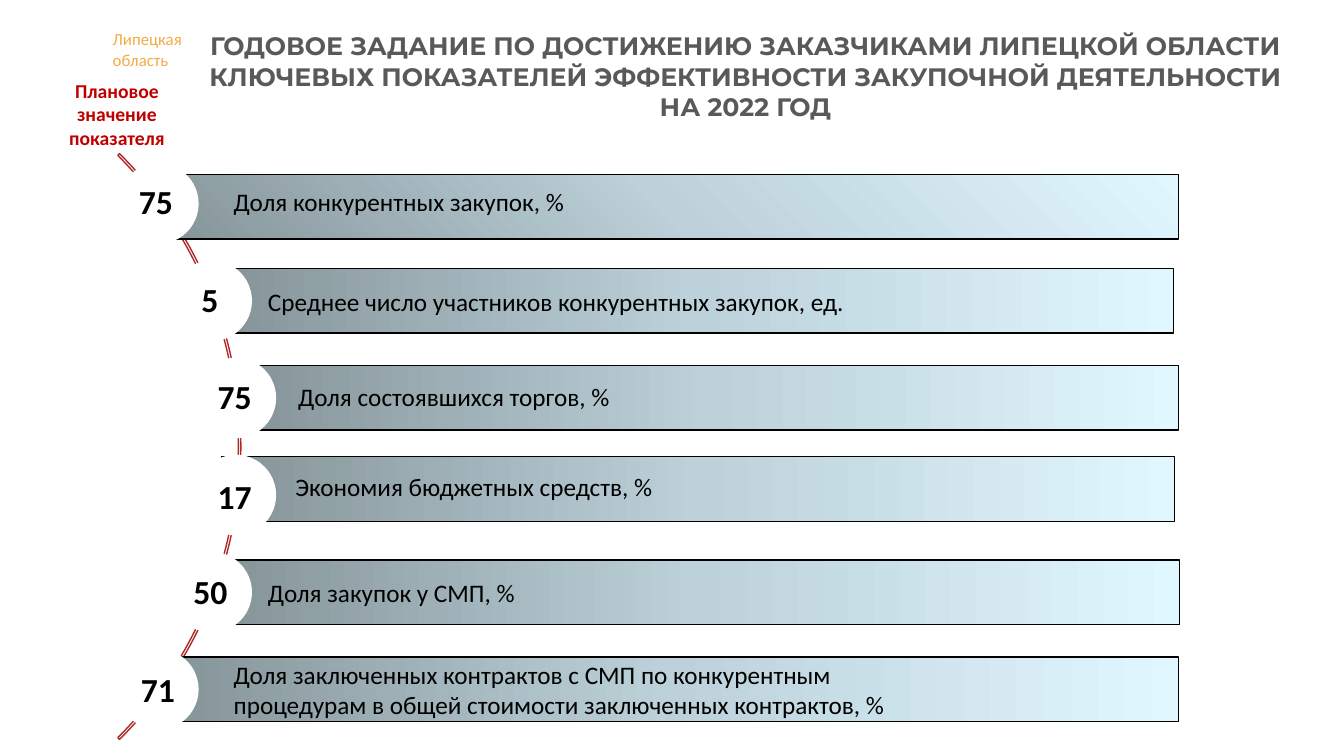
from dataclasses import dataclass

from lxml.etree import SubElement
from pptx import Presentation
from pptx.dml.color import RGBColor
from pptx.enum.shapes import MSO_SHAPE as Preset
from pptx.enum.text import MSO_ANCHOR as Anchor, MSO_AUTO_SIZE as AutoSize, PP_ALIGN as Align
from pptx.oxml.ns import qn
from pptx.util import Inches, Pt

SLIDE_WIDTH, SLIDE_HEIGHT = Inches(13.33), Inches(7.5)
COLUMN, ROW = SLIDE_WIDTH / 100, SLIDE_HEIGHT / 100
COLORS = {
    "title": "595959", "region": "F2AC44", "caption": "C00000",
    "arc": "AE2929", "text": "000000", "circle": "FFFFFF",
    "bar_dark": "849398", "bar_middle": "BCD1D9", "bar_light": "E1F7FF",
}
FIRST_ROW, ROW_STEP, CIRCLE_WIDTH, CIRCLE_HEIGHT = 21.6, 12.85, 6, 10.67
BAR_HEIGHT, LABEL_WIDTH, NUMBER_WIDTH, NUMBER_HEIGHT = 8.53, 50.1, 4.65, 6.67


@dataclass
class Box:
    left: float
    top: float
    width: float
    height: float

    def inside(self, left, top, width, height):
        return Box(self.left + left, self.top + top, width, height)

    def lengths(self):
        return (round(self.left * COLUMN), round(self.top * ROW),
                round(self.width * COLUMN), round(self.height * ROW))


@dataclass
class Indicator:
    value: str
    label: str
    circle_left: float
    number: tuple
    bar: tuple
    label_at: tuple
    radial: bool = False


INDICATORS = [
    Indicator("75", "Доля конкурентных закупок, %",
              8.78, (9.6, 1.73), (11.78, 1.47, 87.68), (16.65, 2.4), radial=True),
    Indicator("5", "Среднее число участников конкурентных закупок, ед.",
              12.75, (14.25, 1.73), (16.05, 1.07, 87.3), (19.2, 2.8)),
    Indicator("75", "Доля состоявшихся торгов, %",
              14.55, (15.45, 1.73), (17.55, 1.07, 87.68), (21.45, 2.5)),
    Indicator("17", "Экономия бюджетных средств, %",
              14.55, (15.45, 2.13), (16.5, 0.27, 87.38), (21.23, 1.6)),
    Indicator("50", "Доля закупок у СМП, %",
              12.75, (13.65, 1.87), (15.83, 1.07, 87.75), (19.2, 2.67)),
    Indicator("71", "Доля заключенных контрактов с СМП по конкурентным процедурам "
              "в общей стоимости заключенных контрактов, %",
              8.78, (9.75, 2), (11.78, 1.07, 87.68), (16.65, 0.67)),
]


def color(name):
    return RGBColor.from_string(COLORS[name])


def write(shape, lines, size, color_name="text", font_name="Calibri", bold=False,
          align=Align.LEFT, anchor=Anchor.TOP):
    frame = shape.text_frame
    frame.word_wrap = True
    frame.auto_size = AutoSize.NONE
    frame.vertical_anchor = anchor
    frame.text = "\n".join(lines)
    for paragraph in frame.paragraphs:
        paragraph.alignment = align
        paragraph.line_spacing = 1.0
        font = paragraph.font
        font.name, font.size, font.bold = font_name, Pt(size), bold
        font.color.rgb = color(color_name)


def add_text(slide, box, *lines, **text_format):
    write(slide.shapes.add_textbox(*box.lengths()), lines, **text_format)


def add_preset(slide, preset, box, fill=None, line=None):
    shape = slide.shapes.add_shape(preset, *box.lengths())
    shape.shadow.inherit = False
    if fill:
        shape.fill.solid()
        shape.fill.fore_color.rgb = color(fill)
    else:
        shape.fill.background()
    if line:
        shape.line.color.rgb = color(line)
        shape.line.width = Pt(1)
    else:
        shape.line.fill.background()
    return shape


def fill_gradient(shape, radial):
    shape.fill.gradient()
    gradient = shape._element.spPr.find(qn("a:gradFill"))
    for child in list(gradient):
        gradient.remove(child)
    stops = SubElement(gradient, qn("a:gsLst"))
    for position, name in ((0, "bar_dark"), (50000, "bar_middle"), (100000, "bar_light")):
        stop = SubElement(stops, qn("a:gs"), pos=str(position))
        SubElement(stop, qn("a:srgbClr"), val=COLORS[name])
    if radial:
        shading = SubElement(gradient, qn("a:path"), path="circle")
        SubElement(shading, qn("a:fillToRect"), t="100000", r="100000")
    else:
        SubElement(gradient, qn("a:lin"), ang="0", scaled="1")


def add_heading(slide, box):
    title = slide.shapes.title
    title.left, title.top, title.width, title.height = box.lengths()
    write(title, ["ГОДОВОЕ ЗАДАНИЕ ПО ДОСТИЖЕНИЮ ЗАКАЗЧИКАМИ ЛИПЕЦКОЙ ОБЛАСТИ",
                  "КЛЮЧЕВЫХ ПОКАЗАТЕЛЕЙ ЭФФЕКТИВНОСТИ ЗАКУПОЧНОЙ ДЕЯТЕЛЬНОСТИ",
                  "НА 2022 ГОД"],
          size=18, color_name="title", font_name="Montserrat", bold=True,
          align=Align.CENTER, anchor=Anchor.MIDDLE)


def add_arc(slide, box):
    arc = add_preset(slide, Preset.BLOCK_ARC, box, line="arc")
    for index, value in enumerate((189, 27, 0.003)):
        arc.adjustments[index] = value


def add_indicator(slide, box, indicator):
    bar_left, bar_top, bar_right = indicator.bar
    bar_box = box.inside(bar_left, bar_top, bar_right - bar_left, BAR_HEIGHT)
    bar = add_preset(slide, Preset.RECTANGLE, bar_box, line="text")
    fill_gradient(bar, indicator.radial)
    circle_box = box.inside(indicator.circle_left, 0, CIRCLE_WIDTH, CIRCLE_HEIGHT)
    add_preset(slide, Preset.OVAL, circle_box, fill="circle")
    add_text(slide, box.inside(*indicator.number, NUMBER_WIDTH, NUMBER_HEIGHT),
             indicator.value, size=24, bold=True)
    label_height = 9.47 if len(indicator.label) > 60 else 5.33
    add_text(slide, box.inside(*indicator.label_at, LABEL_WIDTH, label_height),
             indicator.label, size=18)


def add_indicators(slide, box):
    add_arc(slide, box.inside(-43.73, 4.27 - FIRST_ROW, 61.65, 109.6))
    for index, indicator in enumerate(INDICATORS):
        row_box = box.inside(0, index * ROW_STEP, box.width, CIRCLE_HEIGHT)
        add_indicator(slide, row_box, indicator)


def main():
    presentation = Presentation()
    presentation.slide_width, presentation.slide_height = SLIDE_WIDTH, SLIDE_HEIGHT
    slide = presentation.slides.add_slide(presentation.slide_layouts[5])
    add_text(slide, Box(7.65, 3.2, 6.83, 6.67), "Липецкая", "область",
             size=12, color_name="region")
    add_heading(slide, Box(13.65, 3.73, 83.63, 12.67))
    add_indicators(slide, Box(0, FIRST_ROW, 100, 100 - FIRST_ROW))
    add_text(slide, Box(2.63, 9.73, 12.15, 10.8), "Плановое значение показателя",
             size=14, color_name="caption", bold=True, align=Align.CENTER)
    presentation.save("out.pptx")


if __name__ == "__main__":
    main()
